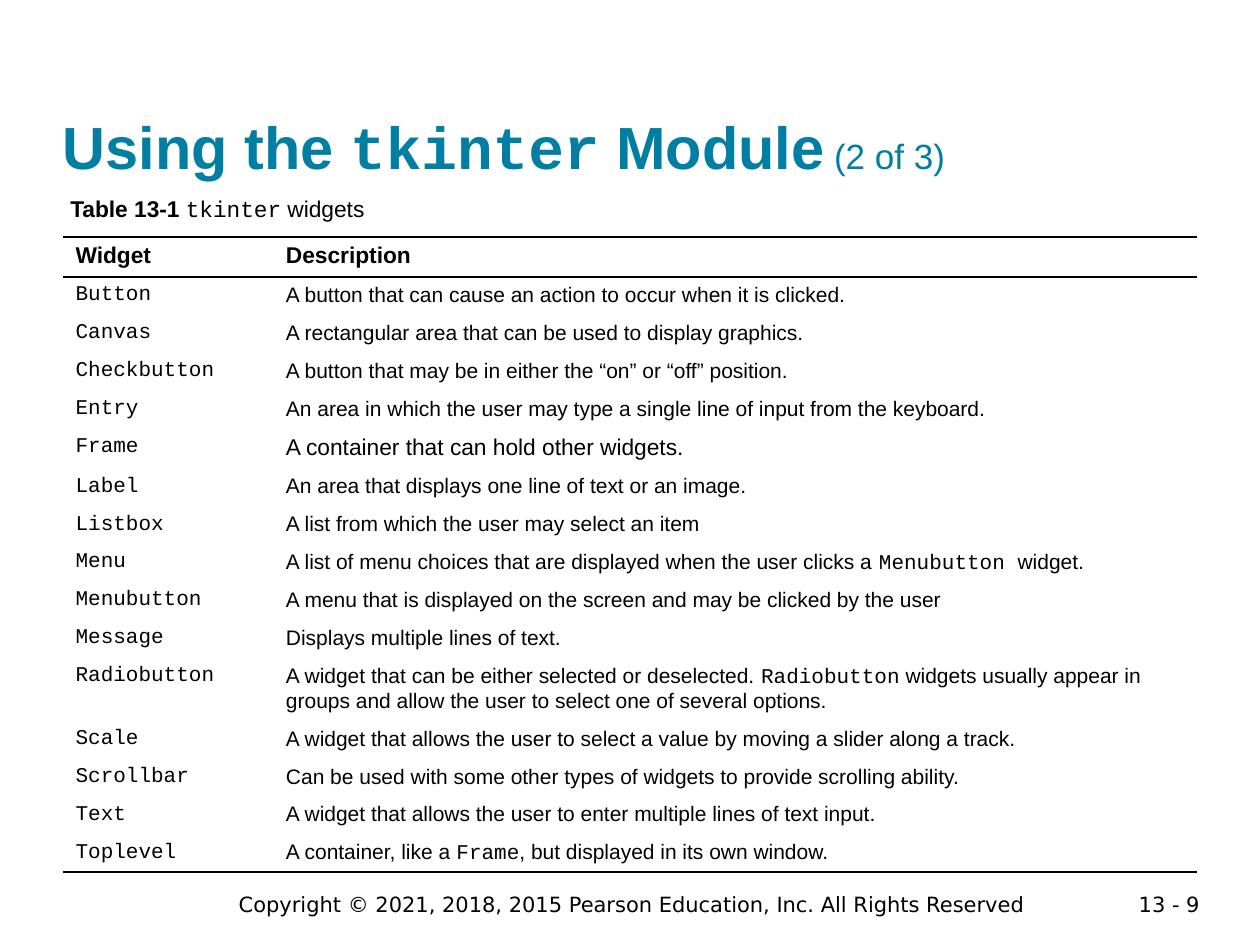
from lxml import etree
from pptx import Presentation
from pptx.dml.color import RGBColor
from pptx.enum import text
from pptx.oxml import ns
from pptx.util import Inches, Pt

BLACK = RGBColor(0x00, 0x00, 0x00)
WHITE = RGBColor(0xFF, 0xFF, 0xFF)
TEAL = RGBColor(0x00, 0x7F, 0xA3)
SANS, MONO, FOOT = "Arial", "Courier New", "DejaVu Sans"

ROWS = [
    ("Button", "A button that can cause an action to occur when it is clicked."),
    ("Canvas", "A rectangular area that can be used to display graphics."),
    ("Checkbutton", "A button that may be in either the “on” or “off” position."),
    ("Entry", "An area in which the user may type a single line of input from the keyboard."),
    ("Frame", "A container that can hold other widgets."),
    ("Label", "An area that displays one line of text or an image."),
    ("Listbox", "A list from which the user may select an item"),
    ("Menu", "A list of menu choices that are displayed when the user clicks a `Menubutton `widget."),
    ("Menubutton", "A menu that is displayed on the screen and may be clicked by the user"),
    ("Message", "Displays multiple lines of text."),
    ("Radiobutton", "A widget that can be either selected or deselected. `Radiobutton` widgets "
     "usually appear in groups and allow the user to select one of several options."),
    ("Scale", "A widget that allows the user to select a value by moving a slider along a track."),
    ("Scrollbar", "Can be used with some other types of widgets to provide scrolling ability."),
    ("Text", "A widget that allows the user to enter multiple lines of text input."),
    ("Toplevel", "A container, like a `Frame`, but displayed in its own window."),
]
TALL = {"Frame": 0.31, "Radiobutton": 0.5}


def write(para, words, size, color=BLACK, bold=False, face=SANS):
    """Add runs to a paragraph, with words between backticks in the code font."""
    for i, part in enumerate(words.split("`")):
        if part:
            run = para.add_run()
            run.text = part
            font = run.font
            font.name = MONO if i % 2 else face
            font.size, font.bold = Pt(size), bold
            font.color.rgb = color


def add_box(slide, x, y, w, h, wrap=True):
    """Add a text box and return its text frame."""
    frame = slide.shapes.add_textbox(Inches(x), Inches(y), Inches(w), Inches(h)).text_frame
    frame.word_wrap = wrap
    return frame


def add_title(slide, x, y, w, h):
    """Place the slide title on the bottom of its box."""
    frame = add_box(slide, x, y, w, h)
    frame.margin_left = frame.margin_right = frame.margin_top = frame.margin_bottom = 0
    frame.vertical_anchor = text.MSO_ANCHOR.BOTTOM
    para = frame.paragraphs[0]
    write(para, "Using the `tkinter` Module", 34, TEAL, True)
    write(para, " (2 of 3)", 20, TEAL)


def add_label(slide, x, y, w, h):
    """Place the table caption."""
    para = add_box(slide, x, y, w, h, False).paragraphs[0]
    write(para, "Table 13-1 ", 13, bold=True)
    write(para, "`tkinter` widgets", 13)


def add_foot(slide, x, y, w, h, words, align):
    """Place one part of the footer."""
    para = add_box(slide, x, y, w, h).paragraphs[0]
    para.alignment = align
    write(para, words, 12, face=FOOT)


def set_edges(cell, ruled):
    """Rule the named edges of a cell in black and clear the others."""
    props = cell._tc.get_or_add_tcPr()
    for edge in "LRTB":
        line = etree.SubElement(props, ns.qn(f"a:ln{edge}"), w=str(Pt(1)))
        if edge in ruled:
            fill = etree.SubElement(line, ns.qn("a:solidFill"))
            etree.SubElement(fill, ns.qn("a:srgbClr"), val=str(BLACK))
        else:
            etree.SubElement(line, ns.qn("a:noFill"))


def add_grid(slide, x, y, w, h):
    """Place the table of widgets."""
    rows = [("Widget", "Description")] + ROWS
    grid = slide.shapes.add_table(len(rows), 2, Inches(x), Inches(y), Inches(w), Inches(h)).table
    grid.first_row = grid.horz_banding = False
    grid.columns[0].width = Inches(1.67)
    grid.columns[1].width = Inches(w - 1.67)
    edges = {0: "TB", 1: "T", len(rows) - 1: "B"}
    for r, row in enumerate(rows):
        head = r == 0
        grid.rows[r].height = Inches(0.32 if head else TALL.get(row[0], 0.3))
        for c, words in enumerate(row):
            cell = grid.cell(r, c)
            set_edges(cell, edges.get(r, ""))
            cell.fill.solid()
            cell.fill.fore_color.rgb = WHITE
            size = 13 if head or (c == 1 and row[0] == "Frame") else 12
            face = SANS if head or c else MONO
            write(cell.text_frame.paragraphs[0], words, size, bold=head, face=face)


def main():
    """Build the slide and save it."""
    deck = Presentation()
    deck.slide_width, deck.slide_height = Inches(10), Inches(7.5)
    slide = deck.slides.add_slide(deck.slide_layouts[6])
    add_foot(slide, 8.62, 7.03, 1, 0.22, "13 - 9", text.PP_ALIGN.RIGHT)
    add_foot(slide, 1.64, 7.03, 6.75, 0.3,
             "Copyright © 2021, 2018, 2015 Pearson Education, Inc. All Rights Reserved",
             text.PP_ALIGN.CENTER)
    add_title(slide, 0.5, 0.24, 9, 1.2)
    add_label(slide, 0.46, 1.5, 2.57, 0.32)
    add_grid(slide, 0.5, 1.88, 9, 5.03)
    deck.save("out.pptx")


if __name__ == "__main__":
    main()
